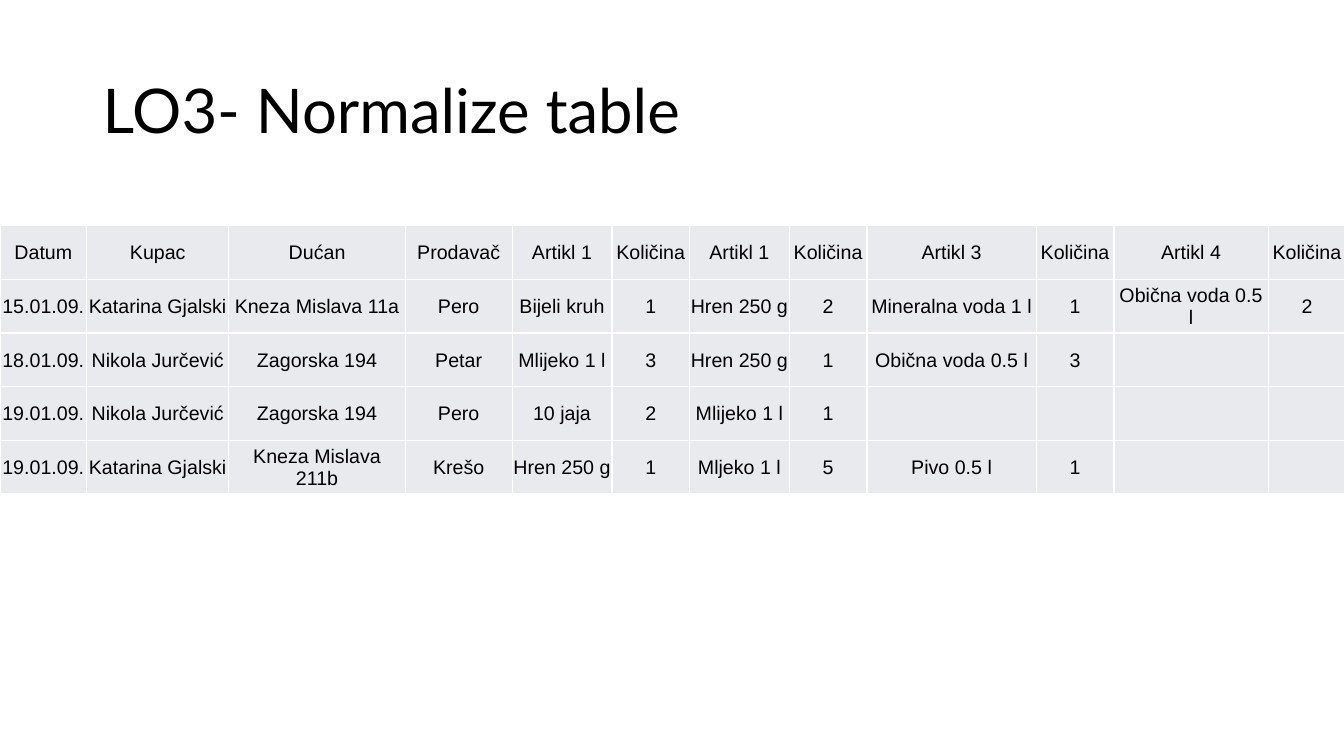
from lxml import etree
from pptx import Presentation, util as u
from pptx.dml.color import RGBColor
from pptx.enum import text as t
from pptx.oxml import ns

BLACK = RGBColor(0, 0, 0)
PALE = RGBColor(0xE8, 0xEA, 0xED)
WHITE = RGBColor(0xFF, 0xFF, 0xFF)
WIDE, HIGH = 13.33, 7.5
COLS = [0.86, 1.41, 1.75, 1.06, 0.99, 0.77, 0.99, 0.77, 1.68, 0.77, 1.53, 0.77]
SALES = [
    ["Datum", "Kupac", "Dućan", "Prodavač", "Artikl 1", "Količina",
     "Artikl 1", "Količina", "Artikl 3", "Količina", "Artikl 4", "Količina"],
    ["15.01.09.", "Katarina Gjalski", "Kneza Mislava 11a", "Pero", "Bijeli kruh", "1",
     "Hren 250 g", "2", "Mineralna voda 1 l", "1", "Obična voda 0.5 l", "2"],
    ["18.01.09.", "Nikola Jurčević", "Zagorska 194", "Petar", "Mlijeko 1 l", "3",
     "Hren 250 g", "1", "Obična voda 0.5 l", "3"],
    ["19.01.09.", "Nikola Jurčević", "Zagorska 194", "Pero", "10 jaja", "2",
     "Mlijeko 1 l", "1"],
    ["19.01.09.", "Katarina Gjalski", "Kneza Mislava 211b", "Krešo", "Hren 250 g", "1",
     "Mljeko 1 l", "5", "Pivo 0.5 l", "1"],
]


def write(frame, words, font="Arial", size=14, color=BLACK,
          align=t.PP_ALIGN.CENTER, space=1.0):
    para = frame.paragraphs[0]
    para.alignment = align
    para.line_spacing = space
    run = para.add_run()
    run.text = words
    run.font.name = font
    run.font.size = u.Pt(size)
    run.font.color.rgb = color


def edge(cell, color, width):
    props = cell._tc.get_or_add_tcPr()
    for spot, side in enumerate(("lnL", "lnR", "lnT", "lnB")):
        line = etree.Element(ns.qn("a:" + side), w=str(u.Pt(width)))
        fill = etree.SubElement(line, ns.qn("a:solidFill"))
        etree.SubElement(fill, ns.qn("a:srgbClr"), val=str(color))
        props.insert(spot, line)


def title(slide, box, words):
    frame = slide.shapes.add_textbox(*map(u.Inches, box)).text_frame
    frame.word_wrap = True
    frame.vertical_anchor = t.MSO_ANCHOR.MIDDLE
    write(frame, words, font="Lato", size=44, align=t.PP_ALIGN.LEFT, space=0.9)


def grid(slide, box, rows, cols):
    frame = slide.shapes.add_table(len(rows), len(cols), *map(u.Inches, box))
    table = frame.table
    table.first_row = table.horz_banding = False
    for col, width in zip(table.columns, cols):
        col.width = u.Inches(width)
    for r, row in enumerate(rows):
        table.rows[r].height = u.Inches(box[3] / len(rows))
        for c in range(len(cols)):
            cell = table.cell(r, c)
            cell.fill.solid()
            cell.fill.fore_color.rgb = PALE
            cell.vertical_anchor = t.MSO_ANCHOR.MIDDLE
            cell.margin_left = cell.margin_right = cell.margin_top = u.Inches(0.01)
            cell.margin_bottom = 0
            edge(cell, WHITE, 1)
            if c < len(row):
                write(cell.text_frame, row[c])


def main():
    deck = Presentation()
    deck.slide_width, deck.slide_height = u.Inches(WIDE), u.Inches(HIGH)
    slide = deck.slides.add_slide(deck.slide_layouts[6])
    title(slide, (0.92, 0.4, 11.5, 1.45), "LO3- Normalize table")
    grid(slide, (0, 2.24, WIDE, 2.66), SALES, COLS)
    deck.save("out.pptx")


if __name__ == "__main__":
    main()
